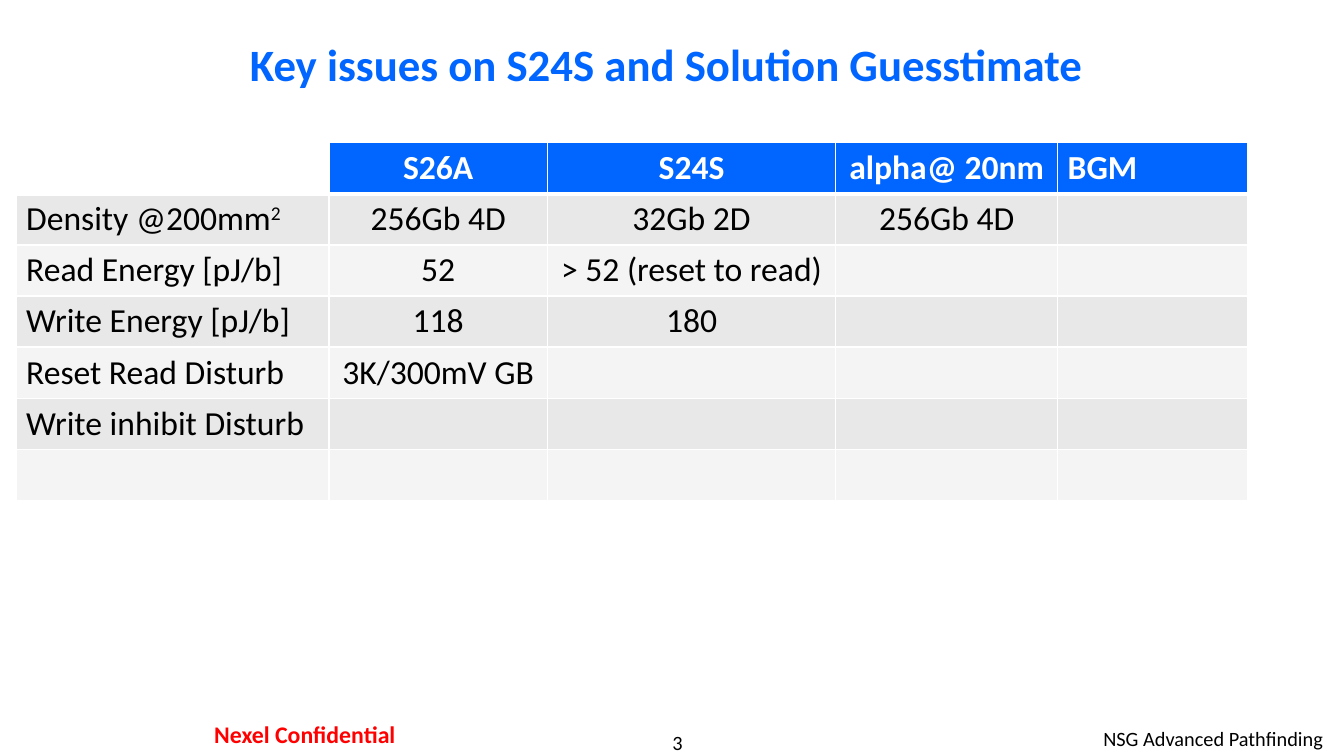
from lxml.etree import SubElement
from pptx import Presentation
from pptx.dml.color import RGBColor
from pptx.enum.text import MSO_ANCHOR, PP_ALIGN
from pptx.oxml.ns import qn
from pptx.util import Pt

BLUE = RGBColor(0x00, 0x66, 0xFF)
RED = RGBColor(0xFF, 0x00, 0x00)
BLACK = RGBColor(0x00, 0x00, 0x00)
WHITE = RGBColor(0xFF, 0xFF, 0xFF)
DARK_BAND = RGBColor(0xE8, 0xE8, 0xE8)
LIGHT_BAND = RGBColor(0xF4, 0xF4, 0xF4)

COLUMN_WIDTHS = [223.5, 156, 206, 158.5, 135.5]
ROW_HEIGHT = 36.5
ISSUES = [
    ["", "S26A", "S24S", "alpha@ 20nm", "BGM"],
    ["Density @200mm^2", "256Gb 4D", "32Gb 2D", "256Gb 4D", ""],
    ["Read Energy [pJ/b]", "52", "> 52 (reset to read)", "", ""],
    ["Write Energy [pJ/b]", "118", "180", "", ""],
    ["Reset Read Disturb", "3K/300mV GB", "", "", ""],
    ["Write inhibit Disturb", "", "", "", ""],
    ["", "", "", "", ""],
]


def add_run(paragraph, text, size, color, bold=False):
    run = paragraph.add_run()
    run.text = text
    run.font.color.rgb = color
    font_format = {"name": "Calibri", "size": Pt(size), "bold": bold}
    for attribute, value in font_format.items():
        setattr(run.font, attribute, value)
    return run


def add_label(slide, text, box, size, color, align=PP_ALIGN.CENTER,
              bold=False, anchor=MSO_ANCHOR.TOP, insets=(7.2, 3.6)):
    """Add one line of text; insets are the side and the top/bottom margins."""
    frame = slide.shapes.add_textbox(*map(Pt, box)).text_frame
    side, edge = map(Pt, insets)
    frame_format = {
        "word_wrap": True, "vertical_anchor": anchor,
        "margin_left": side, "margin_right": side,
        "margin_top": edge, "margin_bottom": edge,
    }
    for attribute, value in frame_format.items():
        setattr(frame, attribute, value)
    paragraph = frame.paragraphs[0]
    paragraph.alignment = align
    add_run(paragraph, text, size, color, bold)


def set_borders(cell, bottom_width):
    properties = cell._tc.get_or_add_tcPr()
    widths = {"a:lnL": 1, "a:lnR": 1, "a:lnT": 1, "a:lnB": bottom_width}
    for position, (tag, width) in enumerate(widths.items()):
        line = SubElement(properties, qn(tag), w=str(Pt(width)))
        fill = SubElement(line, qn("a:solidFill"))
        SubElement(fill, qn("a:srgbClr"), val=str(WHITE))
        properties.insert(position, line)


def fill_cell(cell, text, row, column):
    """Style a cell by its place; text after ^ becomes superscript."""
    header = row == 0
    if header and column == 0:
        cell.fill.background()
    else:
        band = DARK_BAND if row % 2 else LIGHT_BAND
        cell.fill.solid()
        cell.fill.fore_color.rgb = BLUE if header else band
    set_borders(cell, 3 if header else 1)
    if not text:
        return
    paragraph = cell.text_frame.paragraphs[0]
    centered = 0 < column < len(COLUMN_WIDTHS) - 1
    paragraph.alignment = PP_ALIGN.CENTER if centered else PP_ALIGN.LEFT
    color = WHITE if header else BLACK
    base, _, exponent = text.partition("^")
    add_run(paragraph, base, 24, color, header)
    if exponent:
        raised = add_run(paragraph, exponent, 24, color, header)
        raised._r.get_or_add_rPr().set("baseline", "30000")


def add_issue_table(slide, left, top):
    table = slide.shapes.add_table(
        len(ISSUES), len(COLUMN_WIDTHS), Pt(left), Pt(top),
        Pt(sum(COLUMN_WIDTHS)), Pt(ROW_HEIGHT * len(ISSUES))).table
    table.first_row = False
    table.horz_banding = False
    for column, width in zip(table.columns, COLUMN_WIDTHS):
        column.width = Pt(width)
    for row, texts in enumerate(ISSUES):
        table.rows[row].height = Pt(ROW_HEIGHT)
        for column, text in enumerate(texts):
            fill_cell(table.cell(row, column), text, row, column)


def main():
    deck = Presentation()
    deck.slide_width, deck.slide_height = Pt(960), Pt(540)
    slide = deck.slides.add_slide(deck.slide_layouts[6])
    add_label(slide, "3", (400, 521.5, 168, 17.5), 14.5, BLACK, insets=(0, 0))
    add_label(slide, "NSG Advanced Pathfinding", (636, 515, 316, 25), 14.5,
              BLACK, PP_ALIGN.RIGHT)
    add_label(slide, "Nexel Confidential", (111.5, 510, 212.5, 29.5), 17, RED,
              bold=True, insets=(8.64, 4.32))
    add_label(slide, "Key issues on S24S and Solution Guesstimate",
              (68, 12, 816, 66.5), 32, BLUE, bold=True,
              anchor=MSO_ANCHOR.MIDDLE)
    add_issue_table(slide, 11.5, 102)
    deck.save("out.pptx")


if __name__ == "__main__":
    main()
